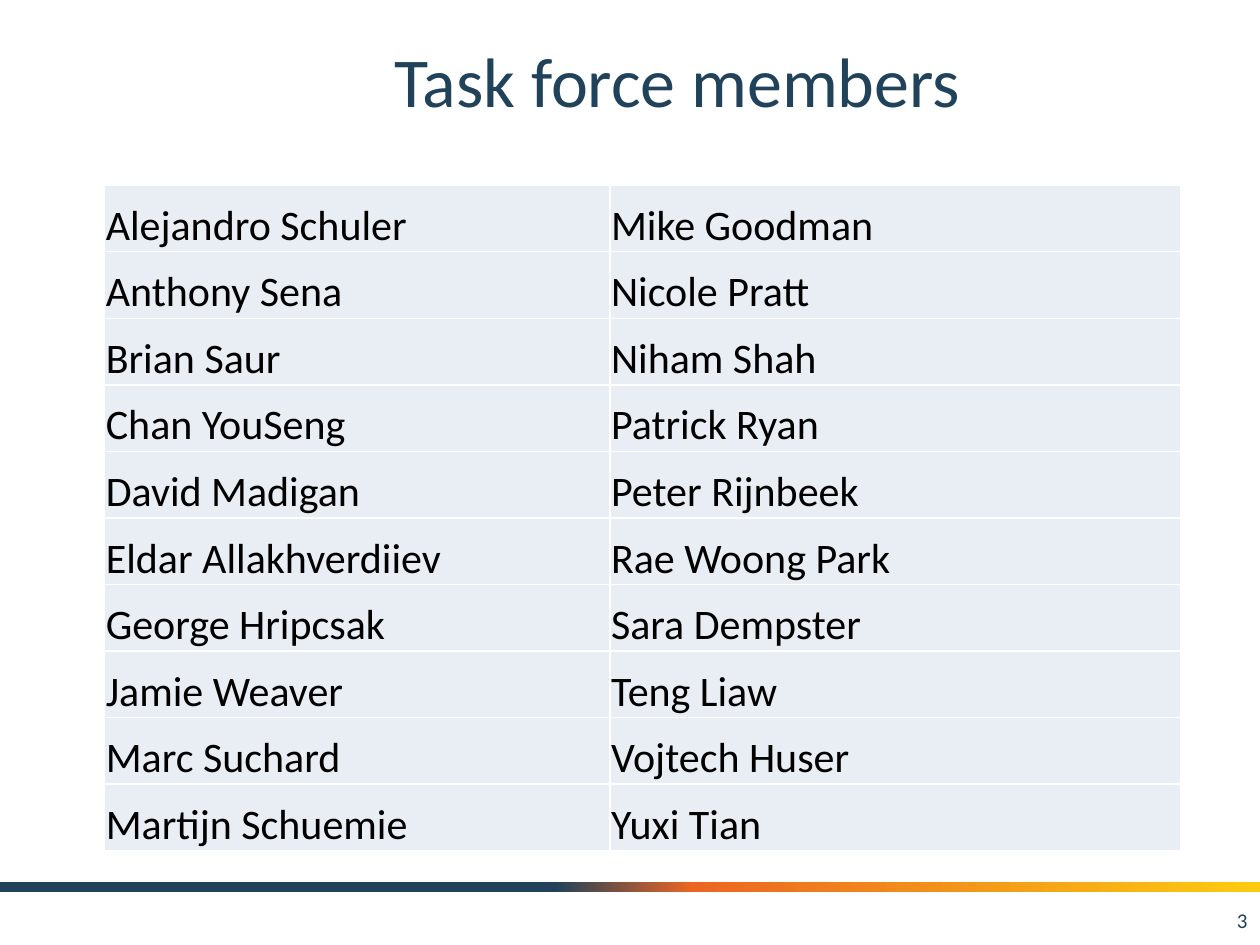
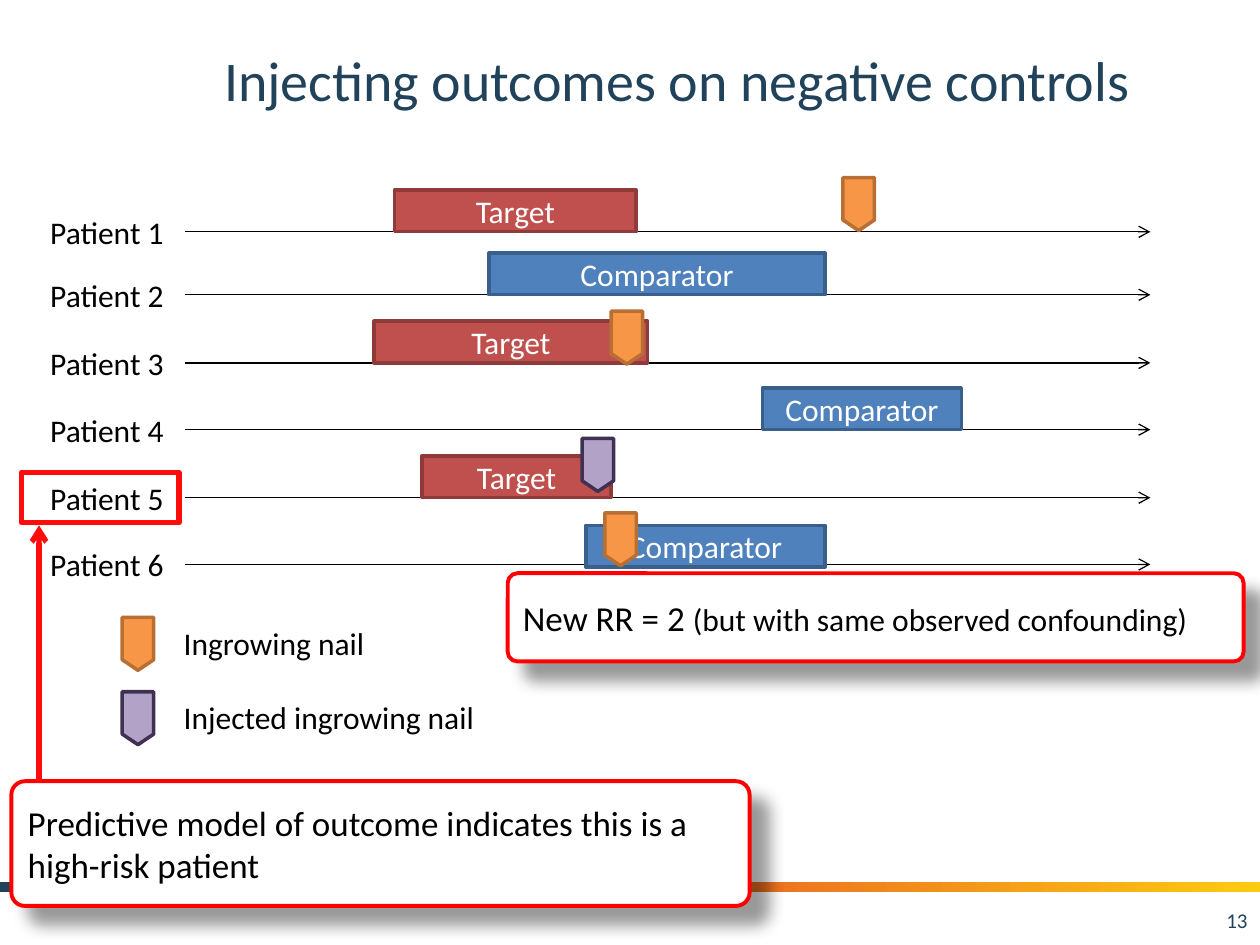
from lxml.etree import SubElement
from pptx import Presentation
from pptx.dml.color import RGBColor
from pptx.enum.shapes import MSO_CONNECTOR, MSO_SHAPE
from pptx.enum.text import MSO_ANCHOR, PP_ALIGN
from pptx.oxml import parse_xml
from pptx.oxml.ns import nsdecls, qn
from pptx.util import Inches, Pt

FONT = "Calibri"
COLORS = {
    "navy": "20425A", "band_orange": "EB6622", "band_yellow": "FCCB10",
    "black": "000000", "white": "FFFFFF", "cell": "E9EDF4",
    "red": "FF0000", "highlight": "FF0D0D",
    "target": "C0504D", "target_line": "8E3B39",
    "comparator": "4F81BD", "comparator_line": "3A5F8C",
    "outcome": "F79646", "outcome_line": "B76F34",
    "injected": "B3A2C7", "injected_line": "403152",
}
MEMBERS = [
    ("Alejandro Schuler", "Mike Goodman"),
    ("Anthony Sena", "Nicole Pratt"),
    ("Brian Saur", "Niham Shah"),
    ("Chan YouSeng", "Patrick Ryan"),
    ("David Madigan", "Peter Rijnbeek"),
    ("Eldar Allakhverdiiev", "Rae Woong Park"),
    ("George Hripcsak", "Sara Dempster"),
    ("Jamie Weaver", "Teng Liaw"),
    ("Marc Suchard", "Vojtech Huser"),
    ("Martijn Schuemie", "Yuxi Tian"),
]
TIMELINES = [
    (1.84, "target", 3.13, 1.51, 1.92),
    (2.34, "comparator", 3.88, 2.01, 2.67),
    (2.88, "target", 2.97, 2.55, 2.17),
    (3.41, "comparator", 6.05, 3.08, 1.58),
    (3.95, "target", 3.35, 3.62, 1.5),
    (4.48, "comparator", 4.65, 4.17, 1.9),
]
MARKERS = [
    ("outcome", 6.69, 1.41), ("outcome", 4.85, 2.47),
    ("outcome", 4.8, 4.07), ("injected", 4.62, 3.48),
]
LEGEND = [
    ("outcome", "Ingrowing nail", 4.9, 1.65),
    ("injected", "Injected ingrowing nail", 5.49, 2.54),
]


def rgb(name):
    return RGBColor.from_string(COLORS[name])


def style(item, size, color="black"):
    item.font.name = FONT
    item.font.size = Pt(size)
    item.font.color.rgb = rgb(color)


def write(frame, text, size, color="black", align=PP_ALIGN.LEFT, anchor=MSO_ANCHOR.MIDDLE):
    frame.vertical_anchor = anchor
    paragraph = frame.paragraphs[0]
    paragraph.text = text
    paragraph.alignment = align
    style(paragraph, size, color)


def add_text(slide, box, text, size, color="black", align=PP_ALIGN.LEFT,
             anchor=MSO_ANCHOR.MIDDLE, wrap=True):
    shape = slide.shapes.add_textbox(*map(Inches, box))
    shape.text_frame.word_wrap = wrap
    write(shape.text_frame, text, size, color, align, anchor)


def add_label(slide, left, top, width, text):
    add_text(slide, (left, top, width, 0.4), text, 18, anchor=MSO_ANCHOR.TOP, wrap=False)


def add_box(slide, kind, box, fill=None, line=None, weight=2):
    shape = slide.shapes.add_shape(kind, *map(Inches, box))
    shape.shadow.inherit = False
    if fill:
        shape.fill.solid()
        shape.fill.fore_color.rgb = rgb(fill)
    else:
        shape.fill.background()
    if line:
        shape.line.color.rgb = rgb(line)
        shape.line.width = Pt(weight)
    else:
        shape.line.fill.background()
    return shape


def add_band(slide):
    band = add_box(slide, MSO_SHAPE.RECTANGLE, (0, 7, 10, 0.08))
    band.fill.gradient()
    band.fill.gradient_angle = 0
    stops = band.fill._fill._gradFill.find(qn("a:gsLst"))
    for stop in list(stops):
        stops.remove(stop)
    for position, color in ((44, "navy"), (55, "band_orange"), (100, "band_yellow")):
        stop = SubElement(stops, qn("a:gs"), pos=str(position * 1000))
        SubElement(stop, qn("a:srgbClr"), val=COLORS[color])


def add_base_slide(presentation, title, title_size, number):
    slide = presentation.slides.add_slide(presentation.slide_layouts[6])
    add_band(slide)
    add_text(slide, (1.25, 0.17, 8.25, 0.92), title, title_size, "navy", PP_ALIGN.CENTER)
    add_text(slide, (7.67, 7.1, 2.33, 0.4), number, 12, "navy", PP_ALIGN.RIGHT)
    return slide


def add_cell_borders(cell):
    properties = cell._tc.get_or_add_tcPr()
    for index, side in enumerate(("lnL", "lnR", "lnT", "lnB")):
        properties.insert(index, parse_xml(
            f'<a:{side} {nsdecls("a")} w="12700"><a:solidFill>'
            f'<a:srgbClr val="{COLORS["white"]}"/></a:solidFill></a:{side}>'))


def add_member_table(slide):
    frame = slide.shapes.add_table(
        len(MEMBERS), 2, Inches(0.83), Inches(1.47), Inches(8.54), Inches(5.28))
    table = frame.table
    table.first_row = False
    table.horz_banding = False
    for column, width in zip(table.columns, (4.01, 4.53)):
        column.width = Inches(width)
    for row, names in enumerate(MEMBERS):
        for column, name in enumerate(names):
            cell = table.cell(row, column)
            cell.margin_left = cell.margin_right = cell.margin_top = Inches(0.01)
            cell.margin_bottom = 0
            cell.fill.solid()
            cell.fill.fore_color.rgb = rgb("cell")
            write(cell.text_frame, name, 24)
            cell.vertical_anchor = MSO_ANCHOR.BOTTOM
            add_cell_borders(cell)


def add_arrow(slide, start, end, color, weight, arrow_end="tailEnd"):
    connector = slide.shapes.add_connector(
        MSO_CONNECTOR.STRAIGHT, *map(Inches, (*start, *end)))
    connector.line.color.rgb = rgb(color)
    connector.line.width = Pt(weight)
    SubElement(connector.line._get_or_add_ln(), qn(f"a:{arrow_end}"), type="arrow")
    SubElement(connector._element.spPr, qn("a:effectLst"))


def add_timeline(slide, number, y, exposure, left, top, width):
    add_arrow(slide, (1.47, y), (9.13, y), "black", 0.75)
    add_label(slide, 0.3, y - 0.2, 1.11, f"Patient {number}")
    bar = add_box(slide, MSO_SHAPE.RECTANGLE, (left, top, width, 0.33),
                  exposure, f"{exposure}_line")
    write(bar.text_frame, exposure.capitalize(), 18, "white", PP_ALIGN.CENTER)


def add_marker(slide, kind, left, top):
    add_box(slide, MSO_SHAPE.FLOWCHART_OFFPAGE_CONNECTOR, (left, top, 0.25, 0.42),
            kind, f"{kind}_line")


def add_callout(slide, box, text, detail=None):
    callout = add_box(slide, MSO_SHAPE.ROUNDED_RECTANGLE, box, "white", "red", 2.25)
    callout.adjustments[0] = 0.109
    effects = callout._element.spPr.find(qn("a:effectLst"))
    effects.append(parse_xml(
        f'<a:outerShdw {nsdecls("a")} blurRad="{Pt(9)}" dist="{Pt(14)}" dir="2700000" '
        f'algn="tl" rotWithShape="0"><a:srgbClr val="{COLORS["black"]}">'
        '<a:alpha val="40000"/></a:srgbClr></a:outerShdw>'))
    write(callout.text_frame, text, 20)
    if detail:
        run = callout.text_frame.paragraphs[0].add_run()
        run.text = detail
        style(run, 18)


def build_members(presentation):
    slide = add_base_slide(presentation, "Task force members", 40, "3")
    add_member_table(slide)


def build_injection(presentation):
    slide = add_base_slide(presentation, "Injecting outcomes on negative controls", 32, "13")
    for number, timeline in enumerate(TIMELINES, 1):
        add_timeline(slide, number, *timeline)
    for marker in MARKERS:
        add_marker(slide, *marker)
    for kind, text, top, width in LEGEND:
        add_marker(slide, kind, 0.97, top)
        add_label(slide, 1.36, top, width, text)
    add_box(slide, MSO_SHAPE.RECTANGLE, (0.17, 3.75, 1.25, 0.4), line="highlight", weight=3)
    add_callout(slide, (0.09, 6.2, 5.86, 0.99),
                "Predictive model of outcome indicates this is a high-risk patient")
    add_arrow(slide, (0.31, 4.17), (0.31, 6.2), "highlight", 3, "headEnd")
    add_callout(slide, (4.03, 4.55, 5.84, 0.7), "New RR = 2 ",
                "(but with same observed confounding)")


def main():
    presentation = Presentation()
    presentation.slide_width = Inches(10)
    presentation.slide_height = Inches(7.5)
    build_members(presentation)
    build_injection(presentation)
    presentation.save("out.pptx")


if __name__ == "__main__":
    main()
